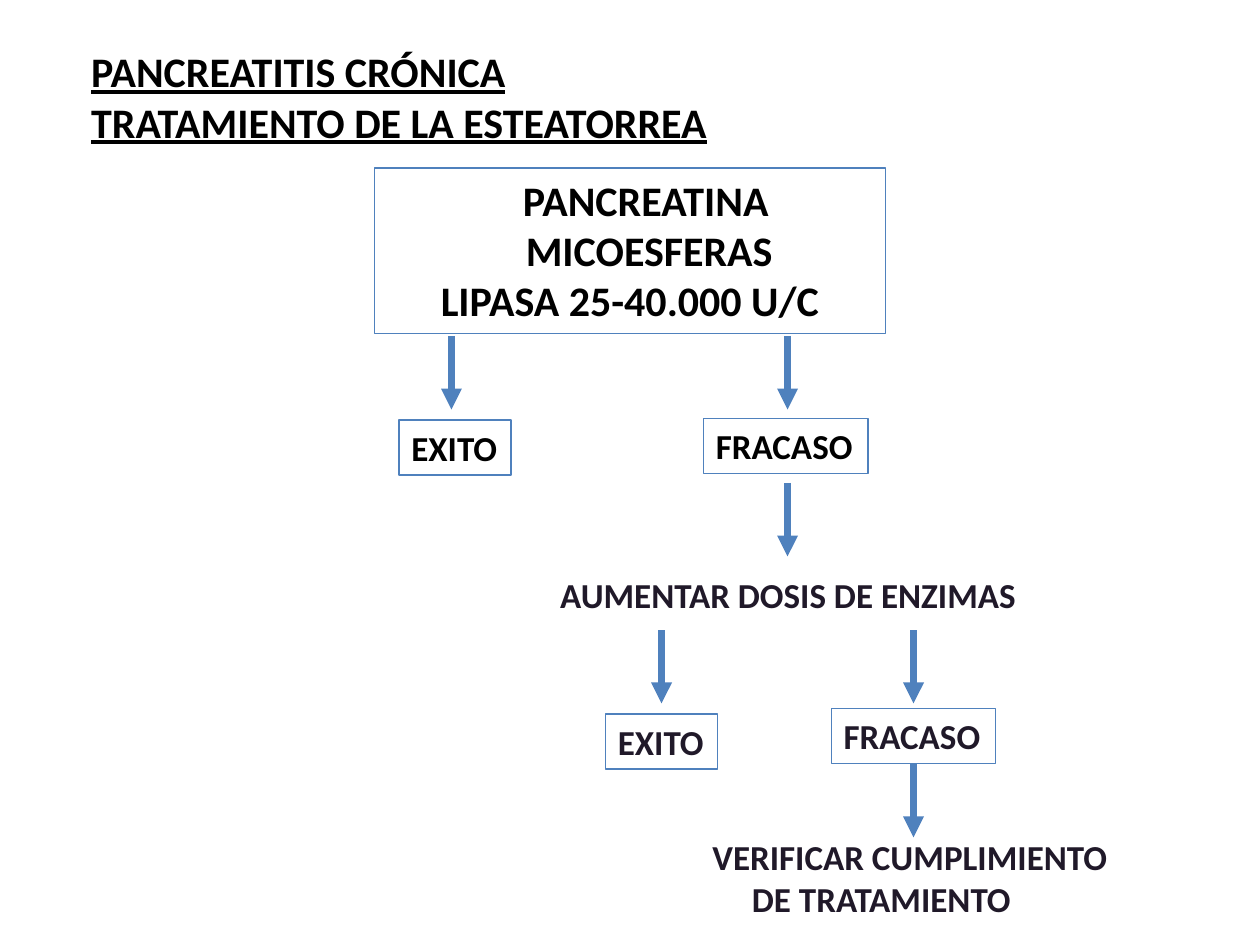
from pptx import Presentation
from pptx.dml.color import RGBColor
from pptx.enum.shapes import MSO_CONNECTOR, MSO_SHAPE
from pptx.enum.text import MSO_ANCHOR, MSO_AUTO_SIZE, PP_ALIGN
from pptx.oxml.ns import qn
from pptx.util import Pt
from lxml import etree

BLACK = RGBColor(0x00, 0x00, 0x00)
DARK = RGBColor(0x20, 0x19, 0x29)
BLUE = RGBColor(0x4F, 0x81, 0xBD)
STRAIGHT = MSO_CONNECTOR.STRAIGHT
RECTANGLE = MSO_SHAPE.RECTANGLE
TOP = MSO_ANCHOR.TOP
GROW = MSO_AUTO_SIZE.SHAPE_TO_FIT_TEXT
LEFT, CENTER = PP_ALIGN.LEFT, PP_ALIGN.CENTER
FONT = "Calibri"
ARROW_LENGTH = 42
BOTTOM_SIDE = 2


def add_text(page, bounds, lines, size=20, color=DARK, align=LEFT,
             underline=False, framed=False, wrap=False, indents=None):
    """Place lines of bold text in a plain or framed box and return it."""
    place = [Pt(length) for length in bounds]
    if framed:
        box = page.shapes.add_shape(RECTANGLE, *place)
        box.shadow.inherit = False
        box.fill.background()
        box.line.color.rgb = BLUE
        box.line.width = Pt(0.75)
    else:
        box = page.shapes.add_textbox(*place)
    frame = box.text_frame
    frame.word_wrap = wrap
    frame.auto_size = GROW
    frame.vertical_anchor = TOP
    for index, line in enumerate(lines):
        para = frame.add_paragraph() if index else frame.paragraphs[0]
        para.alignment = align
        if indents and indents[index]:
            para._p.get_or_add_pPr().set("marL", str(Pt(indents[index])))
        span = para.add_run()
        span.text = line
        span.font.name = FONT
        span.font.size = Pt(size)
        span.font.bold = True
        span.font.underline = underline
        span.font.color.rgb = color
    return box


def add_arrow(page, center, top, source=None):
    """Draw a downward arrow, joined to the bottom of its source if given."""
    arrow = page.shapes.add_connector(
        STRAIGHT, Pt(center), Pt(top), Pt(center), Pt(top + ARROW_LENGTH))
    if source is not None:
        arrow.begin_connect(source, BOTTOM_SIDE)
    arrow.line.color.rgb = BLUE
    arrow.line.width = Pt(4)
    etree.SubElement(arrow.line._get_or_add_ln(), qn("a:tailEnd"), type="triangle")
    etree.SubElement(arrow._element.spPr, qn("a:effectLst"))


def add_heading(page, bounds):
    """Place the underlined two-line heading."""
    add_text(page, bounds, ["PANCREATITIS CRÓNICA", "TRATAMIENTO DE LA ESTEATORREA"],
             size=24, color=BLACK, underline=True)


def add_treatment(page, bounds):
    """Place the framed first-line treatment."""
    add_text(page, bounds, ["PANCREATINA", "MICOESFERAS", "LIPASA 25-40.000 U/C"],
             size=24, color=BLACK, align=CENTER, framed=True, wrap=True,
             indents=[18, 22, 0])


def add_outcomes(page, arrow_top, arrow_centers, success, failure, color):
    """Draw the success and failure branches and return the failure box."""
    for center in arrow_centers:
        add_arrow(page, center, arrow_top)
    add_text(page, success, ["EXITO"], color=color, framed=True)
    return add_text(page, failure, ["FRACASO"], color=color, framed=True)


def add_next_steps(page, increase, check):
    """Place the two plain steps that follow each failure."""
    add_text(page, increase, ["AUMENTAR DOSIS DE ENZIMAS"])
    add_text(page, check, ["VERIFICAR CUMPLIMIENTO", "DE TRATAMIENTO"],
             indents=[0, 22.6])


def main():
    """Build the treatment flow slide and save it."""
    deck = Presentation()
    deck.slide_width, deck.slide_height = Pt(720), Pt(540)
    page = deck.slides.add_slide(deck.slide_layouts[6])
    add_heading(page, (45, 22.5, 369, 65.5))
    add_treatment(page, (214, 96, 292, 94.5))
    add_outcomes(page, 192, (258, 450), (228, 240, 64, 31.5),
                 (402, 239, 94, 31.5), BLACK)
    add_arrow(page, 450, 276)
    second_failure = add_outcomes(page, 360, (378, 522), (346, 408, 64, 31.5),
                                  (475, 405, 94, 31.5), DARK)
    add_arrow(page, 522, 436.5, source=second_failure)
    add_next_steps(page, (313, 324, 277, 31.5), (400, 474, 247, 55.5))
    deck.save("out.pptx")


if __name__ == "__main__":
    main()
